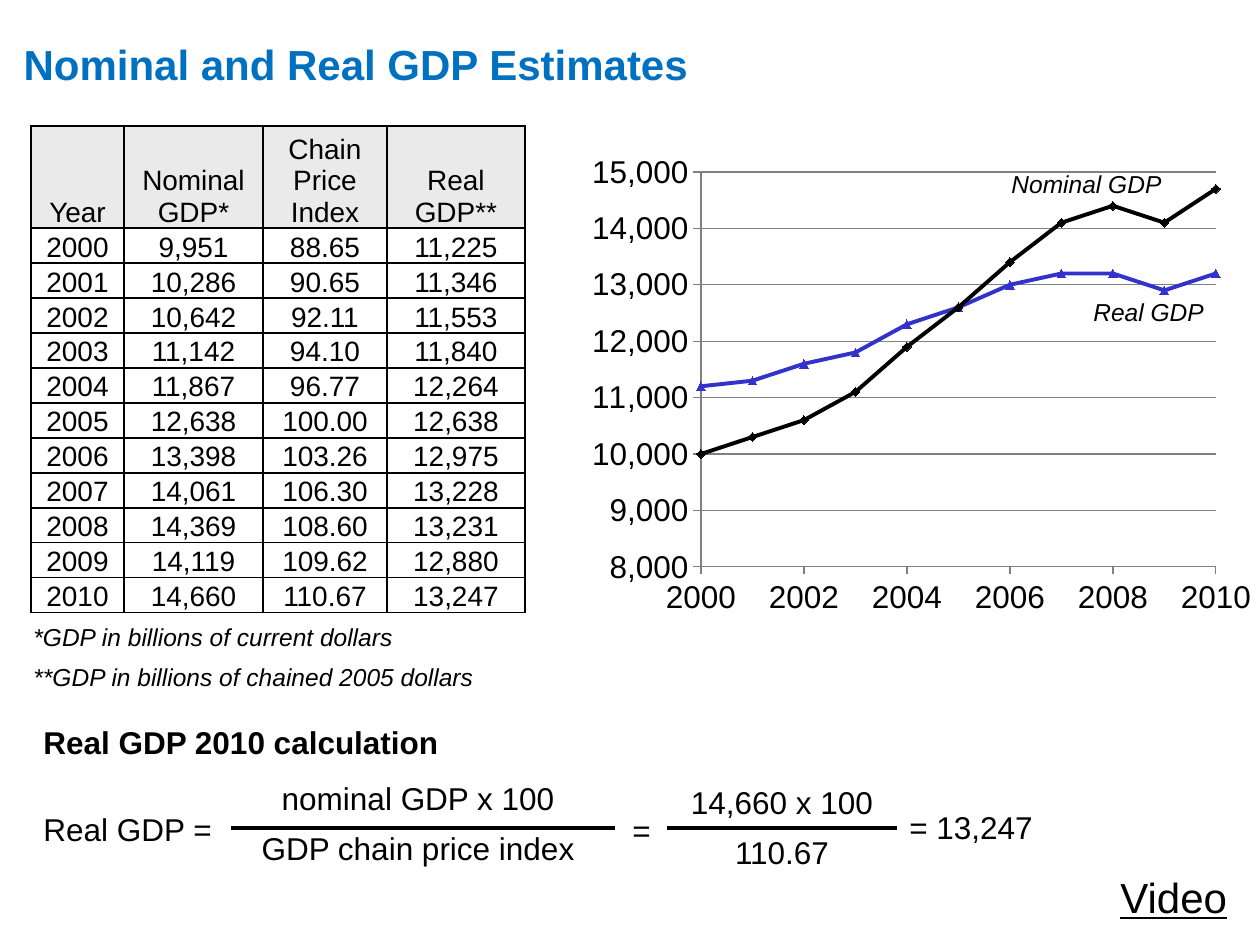
"""Build the slide on nominal and real GDP estimates."""
from dataclasses import dataclass

from lxml import etree
from pptx import Presentation
from pptx import util as u
from pptx.chart.data import XyChartData
from pptx.dml.color import RGBColor
from pptx.enum import chart as charts, shapes, text
from pptx.oxml import parse_xml
from pptx.oxml.ns import nsdecls, qn


@dataclass(frozen=True)
class Theme:
    font: str = "Arial"
    title: str = "0070C0"
    ink: str = "000000"
    real: str = "3333CC"
    header: str = "EAEAEA"
    grid: str = "808080"
    large: int = 24
    body: int = 18
    cell: int = 16
    note: int = 14


THEME = Theme()
SCALE = 914400 / 126


def px(length):
    return u.Emu(round(length * SCALE))


def write(frame, content, size=THEME.body, color=THEME.ink, bold=False, italic=False,
          underline=False, align=text.PP_ALIGN.LEFT, spacing=0.9, gap=0):
    frame.word_wrap = True
    for index, line in enumerate(content.split("\n")):
        paragraph = frame.add_paragraph() if index else frame.paragraphs[0]
        paragraph.alignment = align
        paragraph.line_spacing = spacing
        paragraph.space_before = u.Pt(gap if index else 0)
        run = paragraph.add_run()
        run.text = line
        font = run.font
        font.name, font.size = THEME.font, u.Pt(size)
        font.bold, font.italic, font.underline = bold, italic, underline
        font.color.rgb = RGBColor.from_string(color)


presentation = Presentation()
presentation.slide_width, presentation.slide_height = px(1260), px(945)
slide = presentation.slides.add_slide(presentation.slide_layouts[5])

title = slide.shapes.title
title.left, title.top, title.width, title.height = px(11), px(42), px(1134), px(53)
title.text_frame.vertical_anchor = text.MSO_ANCHOR.MIDDLE
write(title.text_frame, "Nominal and Real GDP Estimates", size=THEME.large,
      color=THEME.title, bold=True, spacing=0.8)

years = list(range(2000, 2011))
nominal = [9951, 10286, 10642, 11142, 11867, 12638, 13398, 14061, 14369, 14119, 14660]
price_index = [88.65, 90.65, 92.11, 94.10, 96.77, 100, 103.26, 106.30, 108.60, 109.62, 110.67]
real = [11225, 11346, 11553, 11840, 12264, 12638, 12975, 13228, 13231, 12880, 13247]

chart_data = XyChartData()
for name, values in (("Nominal GDP", nominal), ("Real GDP", real)):
    series_data = chart_data.add_series(name)
    for year, value in zip(years, values):
        series_data.add_data_point(year, round(value, -2))
chart_width, chart_height = 693, 472
chart = slide.shapes.add_chart(charts.XL_CHART_TYPE.XY_SCATTER_LINES, px(561), px(147),
                               px(chart_width), px(chart_height), chart_data).chart
chart.has_title = chart.has_legend = False
chart.font.name, chart.font.size = THEME.font, u.Pt(THEME.body)
chart.font.color.rgb = RGBColor.from_string(THEME.ink)
chart.plots[0].vary_by_categories = False

for axis, low, high, step, pattern, gridlines in (
        (chart.category_axis, 2000, 2010, 2, "0", False),
        (chart.value_axis, 8000, 15000, 1000, "#,##0", True)):
    axis.minimum_scale, axis.maximum_scale, axis.major_unit = low, high, step
    axis.tick_labels.number_format = pattern
    axis.tick_labels.number_format_is_linked = False
    axis.major_tick_mark = charts.XL_TICK_MARK.OUTSIDE
    axis.minor_tick_mark = charts.XL_TICK_MARK.NONE
    axis.has_major_gridlines = gridlines
    axis.format.line.color.rgb = RGBColor.from_string(THEME.grid)
grid_line = chart.value_axis.major_gridlines.format.line
grid_line.color.rgb = RGBColor.from_string(THEME.grid)
grid_line.width = u.Pt(0.75)

markers = charts.XL_MARKER_STYLE
for series, color, style in zip(chart.plots[0].series, (THEME.ink, THEME.real),
                                (markers.DIAMOND, markers.TRIANGLE)):
    series.smooth = False
    series.format.line.color.rgb = RGBColor.from_string(color)
    series.format.line.width = u.Pt(2.25)
    series.marker.style, series.marker.size = style, 5
    series.marker.format.fill.solid()
    series.marker.format.fill.fore_color.rgb = RGBColor.from_string(color)
    series.marker.format.line.color.rgb = RGBColor.from_string(color)

plot_area = chart.plots[0]._element.getparent()
for layout in plot_area.findall(qn("c:layout")):
    plot_area.remove(layout)
plot_area.insert(0, parse_xml(
    f'<c:layout {nsdecls("c")}><c:manualLayout><c:layoutTarget val="inner"/>'
    '<c:xMode val="edge"/><c:yMode val="edge"/>'
    f'<c:x val="{140 / chart_width}"/><c:y val="{25 / chart_height}"/>'
    f'<c:w val="{515 / chart_width}"/><c:h val="{395 / chart_height}"/>'
    '</c:manualLayout></c:layout>'))

rows = [("Year", "Nominal GDP*", "Chain Price Index", "Real GDP**")]
rows += [(str(year), f"{current:,}", f"{price:.2f}", f"{chained:,}")
         for year, current, price, chained in zip(years, nominal, price_index, real)]
table = slide.shapes.add_table(len(rows), 4, px(31), px(126), px(494), px(487)).table
table.first_row = table.horz_banding = False
for column, width in zip(table.columns, (93, 139, 124, 138)):
    column.width = px(width)
for row_index, values in enumerate(rows):
    table.rows[row_index].height = px(35 if row_index else 102)
    for cell, value in zip(table.rows[row_index].cells, values):
        cell.margin_left = cell.margin_top = cell.margin_right = px(1)
        cell.margin_bottom = 0
        cell.vertical_anchor = text.MSO_ANCHOR.BOTTOM
        if row_index:
            cell.fill.background()
        else:
            cell.fill.solid()
            cell.fill.fore_color.rgb = RGBColor.from_string(THEME.header)
        write(cell.text_frame, value, size=THEME.cell, align=text.PP_ALIGN.CENTER, spacing=1.0)
        properties = cell._tc.get_or_add_tcPr()
        for position, side in enumerate("LRTB"):
            properties.insert(position, parse_xml(
                f'<a:ln{side} {nsdecls("a")} w="12700"><a:solidFill>'
                f'<a:srgbClr val="{THEME.ink}"/></a:solidFill></a:ln{side}>'))

note = {"size": THEME.note, "italic": True}
formula = {"spacing": 0.8}
fraction = {"align": text.PP_ALIGN.CENTER, "gap": 9}
for left, top, width, height, content, style in (
        (21, 619, 431, 39, "*GDP in billions of current dollars", note),
        (21, 659, 478, 39, "**GDP in billions of chained 2005 dollars", note),
        (999, 166, 210, 39, "Nominal GDP", note),
        (1081, 294, 149, 39, "Real GDP", note),
        (1108, 871, 147, 58, "Video", {"size": THEME.large, "underline": True}),
        (31, 724, 504, 43, "Real GDP 2010 calculation", {"bold": True, **formula}),
        (31, 811, 210, 43, "Real GDP =", formula),
        (221, 777, 394, 101, "nominal GDP x 100\nGDP chain price index", fraction),
        (620, 812, 60, 43, "=", formula),
        (640, 781, 284, 101, "14,660 x 100\n110.67", fraction),
        (897, 809, 213, 43, "= 13,247", formula)):
    box = slide.shapes.add_textbox(px(left), px(top), px(width), px(height))
    write(box.text_frame, content, **style)

for start, end in ((231, 615), (667, 897)):
    bar = slide.shapes.add_connector(shapes.MSO_CONNECTOR.STRAIGHT,
                                     px(start), px(828), px(end), px(828))
    bar.line.color.rgb = RGBColor.from_string(THEME.ink)
    bar.line.width = u.Pt(2)
    etree.SubElement(bar._element.spPr, qn("a:effectLst"))

presentation.save("out.pptx")
